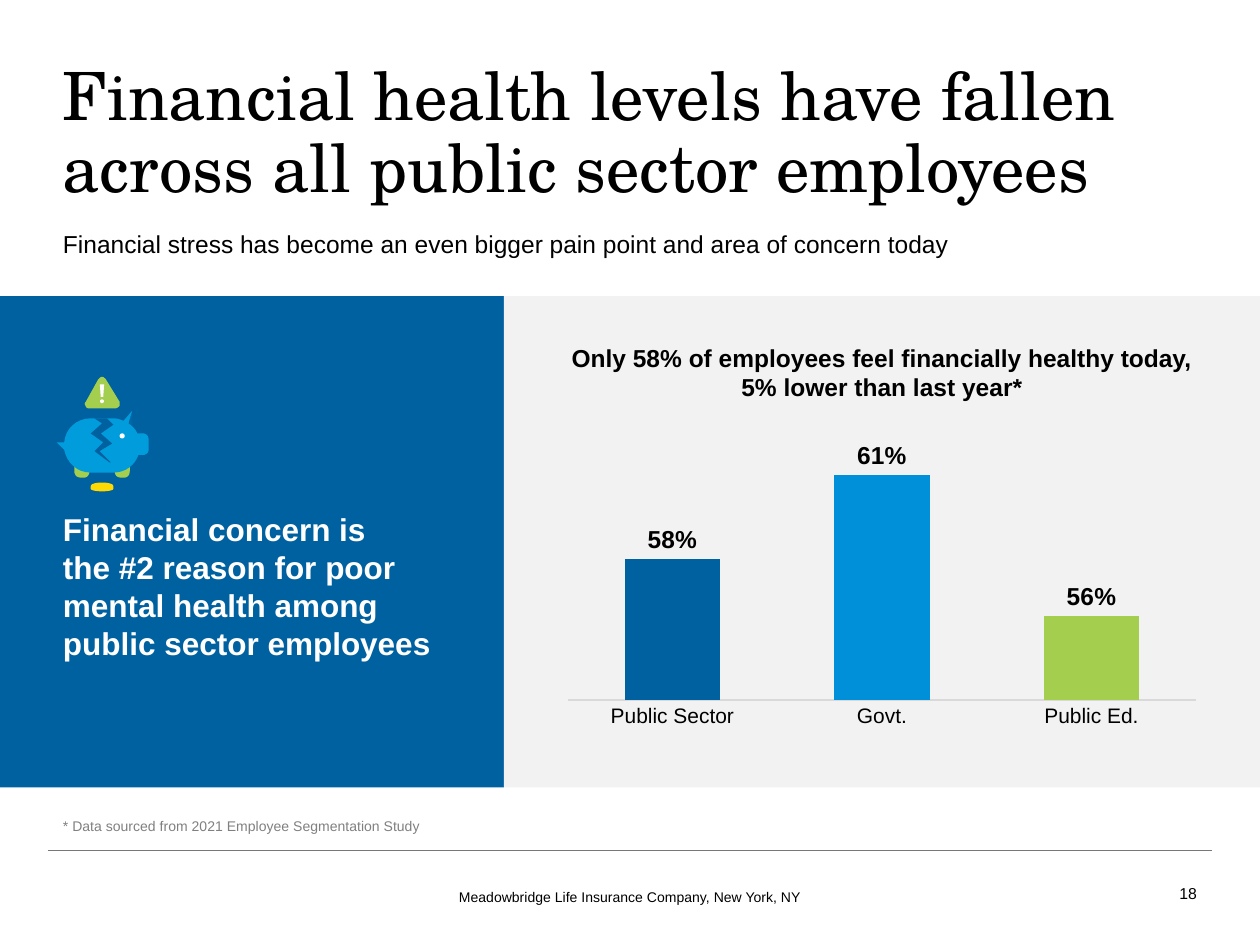
from dataclasses import dataclass

from lxml import etree
from pptx import Presentation
from pptx.chart import data
from pptx.dml.color import RGBColor
from pptx.enum import chart as ch, shapes, text
from pptx.oxml import parse_xml, ns
from pptx.util import Pt


@dataclass(frozen=True)
class Theme:
    sans: str = "Arial"
    serif: str = "TeX Gyre Schola"
    black: str = "000000"
    white: str = "FFFFFF"
    navy: str = "0061A0"
    blue: str = "0090DA"
    green: str = "A4CE4E"
    gold: str = "FFDA02"
    pig: str = "009CDC"
    ear: str = "0066A6"
    pale: str = "F2F2F2"
    rule: str = "75787B"
    axis: str = "D9D9D9"
    muted: str = "808080"
    title: float = 38
    lead: float = 18
    body: float = 14
    label: float = 12
    page: float = 9
    note: float = 8


T = Theme()
LEFT, MID, RIGHT = text.PP_ALIGN.LEFT, text.PP_ALIGN.CENTER, text.PP_ALIGN.RIGHT
TOP, CENTRE, BASE = (text.MSO_ANCHOR.TOP, text.MSO_ANCHOR.MIDDLE,
                     text.MSO_ANCHOR.BOTTOM)


def rgb(code):
    return RGBColor.from_string(code)


def style(font, size, color=T.black, bold=False, name=T.sans):
    font.name, font.size, font.bold = name, Pt(size), bold
    font.color.rgb = rgb(color)


def write(shape, words, size, color=T.black, bold=False, name=T.sans,
          align=LEFT, anchor=TOP, pad=(0, 0, 0, 0)):
    frame = shape.text_frame
    frame.word_wrap = True
    frame.vertical_anchor = anchor
    (frame.margin_left, frame.margin_top,
     frame.margin_right, frame.margin_bottom) = map(Pt, pad)
    para = frame.paragraphs[0]
    para.text = words
    para.alignment = align
    style(para.font, size, color, bold, name)
    return para


def label(slide, box, words, size, **look):
    return write(slide.shapes.add_textbox(*map(Pt, box)), words, size, **look)


def paint(shape, color):
    shape.shadow.inherit = False
    shape.fill.solid()
    shape.fill.fore_color.rgb = rgb(color)
    shape.line.fill.background()
    return shape


def panel(slide, box, color):
    kind = shapes.MSO_SHAPE.RECTANGLE
    return paint(slide.shapes.add_shape(kind, *map(Pt, box)), color)


def trace(steps):
    """Turn steps into points: pairs are corners, sixes are Bezier curves."""
    pts = [steps[0]]
    for step in steps[1:]:
        if len(step) == 2:
            pts.append(step)
            continue
        ends = (pts[-1], step[:2], step[2:4], step[4:])
        for i in range(1, 9):
            t = i / 8
            mix = ((1 - t) ** 3, 3 * t * (1 - t) ** 2, 3 * t * t * (1 - t), t ** 3)
            pts.append(tuple(sum(m * e[k] for m, e in zip(mix, ends))
                             for k in (0, 1)))
    return pts


# Icon outlines on a grid 73 wide and 91 high
FOOT = [(12, 0), (0, 0), (0, 7), (0, 10, 2, 12, 5, 12), (8, 12),
        (10, 12, 12, 10, 12, 7)]
COIN = [(36, 84), (31, 84, 27, 85, 27, 87), (27, 89), (27, 90, 31, 91, 36, 91),
        (41, 91, 45, 90, 45, 89), (45, 87), (45, 85, 41, 84, 36, 84)]
SIGN = [(25, 25), (24, 25, 23, 24, 23, 23), (22, 22, 22, 21, 23, 20), (33, 2),
        (34, 1, 35, 0, 36, 0), (37, 0, 38, 1, 39, 2), (50, 20),
        (50, 21, 50, 22, 50, 23), (49, 24, 48, 25, 47, 25)]
MARK = [(37, 16), (35, 16), (34.3, 6), (37.7, 6)]
DOT = [(2, 0), (3.1, 0, 4, 0.9, 4, 2), (4, 3.1, 3.1, 4, 2, 4),
       (0.9, 4, 0, 3.1, 0, 2), (0, 0.9, 0.9, 0, 2, 0)]
EAR = [(60, 27), (60, 40), (52, 39)]
BODY = [(69, 45), (64, 45), (63, 42, 60, 39, 57, 37), (60, 27), (53, 35),
        (51, 34, 48, 33, 45, 33), (27, 33), (16, 33, 7, 41, 6, 52), (0, 52),
        (6, 58), (8, 68, 16, 76, 27, 76), (45, 76), (55, 76, 62, 70, 65, 62),
        (69, 62), (71, 62, 73, 60, 73, 58), (73, 50), (73, 47, 71, 45, 69, 45)]
CRACK = [(40, 33), (45, 38), (35, 45), (44, 53), (34, 59), (43, 68), (42, 68),
         (30, 59), (37, 52), (27, 45), (36, 37), (30, 33)]


def icon(slide, box):
    left, top, wide, _ = box
    unit = wide / 73
    parts = [(FOOT, 14, 68, 1, T.green), (FOOT, 46, 68, 1, T.green),
             (COIN, 0, 0, 1, T.gold), (SIGN, 0, 0, 1, T.green),
             (MARK, 0, 0, 1, T.white), (DOT, 34.5, 18, 0.75, T.white),
             (BODY, 0, 0, 1, T.pig), (DOT, 50, 45, 1, T.white),
             (CRACK, 0, 0, 1, T.navy)]
    parts.insert(6, (EAR, 0, 0, 1, T.ear))
    for steps, dx, dy, zoom, color in parts:
        pts = [(Pt(left + (dx + x * zoom) * unit), Pt(top + (dy + y * zoom) * unit))
               for x, y in trace(steps)]
        build = slide.shapes.build_freeform(*pts[0])
        build.add_line_segments(pts[1:], close=True)
        paint(build.convert_to_shape(), color)


def header(slide, box):
    left, top, wide, _ = box
    para = label(slide, (left, top, wide, 73),
                 "Financial health levels have fallen across all public "
                 "sector employees", T.title, name=T.serif)
    para.line_spacing = 0.9
    label(slide, (left, top + 95, wide, 31),
          "Financial stress has become an even bigger pain point and area "
          "of concern today", T.body)


def claim(slide, box):
    left, top, _, _ = box
    write(panel(slide, box, T.navy),
          "Financial concern is\vthe #2 reason for poor mental health among "
          "public sector employees", T.lead, color=T.white, bold=True,
          anchor=CENTRE, pad=(36, 50.4, 36, 0))
    icon(slide, (left + 32.4, top + 46.1, 52.56, 65.5))


def bars(slide, box):
    left, top, wide, _ = box
    panel(slide, box, T.pale)
    feed = data.CategoryChartData(number_format="0%")
    feed.categories = ["Public Sector", "Govt.", "Public Ed."]
    feed.add_series("Series 1", (0.58, 0.61, 0.56))
    spot = (left + 36, top + 74.9, wide - 72, 183.6)
    chart = slide.shapes.add_chart(ch.XL_CHART_TYPE.COLUMN_CLUSTERED,
                                   *map(Pt, spot), feed).chart
    chart.has_legend = chart.has_title = False
    style(chart.font, T.label)

    # Axes
    value = chart.value_axis
    value.minimum_scale, value.maximum_scale = 0.53, 0.62
    value.has_major_gridlines = value.visible = False
    cats = chart.category_axis
    cats.major_tick_mark = ch.XL_TICK_MARK.NONE
    cats.format.line.color.rgb = rgb(T.axis)
    cats.format.line.width = Pt(0.75)
    style(cats.tick_labels.font, T.label)

    # Columns and their labels
    plot = chart.plots[0]
    plot.gap_width, plot.vary_by_categories = 120, False
    for i, color in enumerate((T.navy, T.blue, T.green)):
        fill = plot.series[0].points[i].format.fill
        fill.solid()
        fill.fore_color.rgb = rgb(color)
    plot.has_data_labels = True
    tags = plot.data_labels
    tags.show_value, tags.number_format = True, "0%"
    tags.number_format_is_linked = False
    tags.position = ch.XL_LABEL_POSITION.OUTSIDE_END
    style(tags.font, T.body, bold=True)

    # Fixed plot area
    area = chart.element.chart.plotArea
    for old in area.findall(ns.qn("c:layout")):
        area.remove(old)
    rules = (("layoutTarget", "inner"), ("xMode", "edge"), ("yMode", "edge"),
             ("x", 0), ("y", 0.06), ("w", 1), ("h", 0.79))
    inner = "".join(f'<c:{k} val="{v}"/>' for k, v in rules)
    area.insert(0, parse_xml(f'<c:layout {ns.nsdecls("c")}><c:manualLayout>'
                             f'{inner}</c:manualLayout></c:layout>'))

    label(slide, (left, top + 26.6, wide, 34),
          "Only 58% of employees feel financially healthy today, "
          "5% lower than last year*", T.body, bold=True, align=MID,
          pad=(28.8, 0, 28.8, 0))


def footer(slide, box):
    left, top, wide, _ = box
    label(slide, (left, top, wide, 26.6),
          "* Data sourced from 2021 Employee Segmentation Study", T.note,
          color=T.muted, anchor=BASE)
    line = slide.shapes.add_connector(
        shapes.MSO_CONNECTOR.STRAIGHT, Pt(left - 8.6), Pt(top + 36),
        Pt(left + wide + 8.6), Pt(top + 36))
    line.line.color.rgb = rgb(T.rule)
    line.line.width = Pt(0.75)
    etree.SubElement(line.element.spPr, ns.qn("a:effectLst"))
    label(slide, (left + 200, top + 54, wide - 400, 17.3),
          "Meadowbridge Life Insurance Company, New York, NY", T.note,
          align=MID, pad=(0, 3.6, 0, 3.6))
    label(slide, (left + wide - 21.6, top + 51.1, 21.6, 18), "18", T.page,
          align=RIGHT, anchor=CENTRE, pad=(0, 3.6, 0, 3.6))


def main():
    deck = Presentation()
    deck.slide_width, deck.slide_height = Pt(720), Pt(540)
    slide = deck.slides.add_slide(deck.slide_layouts[6])
    header(slide, (36, 36, 648, 126))
    claim(slide, (0, 169.2, 288, 280.8))
    bars(slide, (288, 169.2, 432, 280.8))
    footer(slide, (36, 450, 648, 72))
    deck.save("out.pptx")


if __name__ == "__main__":
    main()
